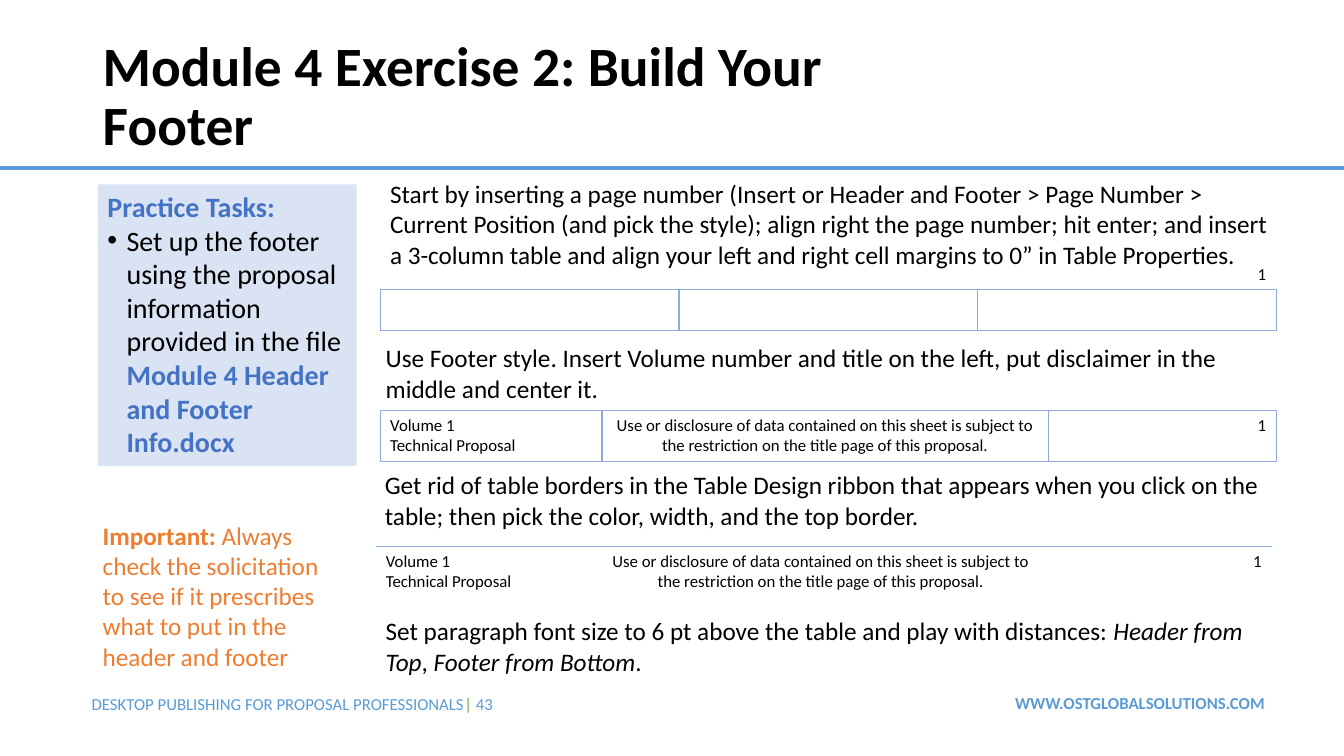
from dataclasses import dataclass
from typing import Optional

from lxml.etree import SubElement
from pptx import Presentation
from pptx.dml.color import RGBColor
from pptx.enum.shapes import MSO_CONNECTOR, MSO_SHAPE
from pptx.enum.text import MSO_ANCHOR, PP_ALIGN
from pptx.oxml import parse_xml
from pptx.oxml.ns import nsdecls, qn
from pptx.util import Cm, Pt


@dataclass(frozen=True)
class Theme:
    font: str = "Calibri"
    black: str = "000000"
    accent: str = "5B9BD5"
    green: str = "70AD47"
    blue: str = "4472C4"
    orange: str = "ED7D31"
    panel: str = "DAE3F3"
    border: str = "8FAADC"
    title: float = 39.6
    task: float = 20
    body: float = 18
    small: float = 12


T = Theme()


@dataclass(frozen=True)
class Run:
    text: str
    color: str = T.black
    bold: bool = False
    italic: bool = False


@dataclass(frozen=True)
class Para:
    runs: tuple[Run, ...]
    align: PP_ALIGN = PP_ALIGN.LEFT
    bullet: bool = False
    spacing: Optional[float] = None


@dataclass(frozen=True)
class Box:
    left: float
    top: float
    width: float
    height: float
    size: float
    paras: tuple[Para, ...]
    anchor: MSO_ANCHOR = MSO_ANCHOR.TOP
    fill: Optional[str] = None


@dataclass(frozen=True)
class Grid:
    left: float
    top: float
    height: float
    widths: tuple[float, ...]
    cells: tuple[tuple[Para, ...], ...]
    sides: str


def para(text: str, align: PP_ALIGN = PP_ALIGN.LEFT) -> Para:
    return Para((Run(text),), align)


def write(tf, paras: tuple[Para, ...], size: float) -> None:
    for i, item in enumerate(paras):
        p = tf.paragraphs[0] if i == 0 else tf.add_paragraph()
        p.alignment = item.align
        if item.spacing:
            p.line_spacing = item.spacing
        if item.bullet:
            pPr = p._p.get_or_add_pPr()
            pPr.set("marL", str(Cm(0.48)))
            pPr.set("indent", str(-Cm(0.48)))
            SubElement(pPr, qn("a:buFont")).set("typeface", "Arial")
            SubElement(pPr, qn("a:buChar")).set("char", "•")
        for run in item.runs:
            r = p.add_run()
            r.text = run.text
            r.font.name, r.font.size = T.font, Pt(size)
            r.font.bold, r.font.italic = run.bold, run.italic
            r.font.color.rgb = RGBColor.from_string(run.color)


def add_box(s, box: Box) -> None:
    place = [Cm(v) for v in (box.left, box.top, box.width, box.height)]
    if box.fill:
        sp = s.shapes.add_shape(MSO_SHAPE.RECTANGLE, *place)
        sp.shadow.inherit = False
        sp.fill.solid()
        sp.fill.fore_color.rgb = RGBColor.from_string(box.fill)
        sp.line.fill.background()
    else:
        sp = s.shapes.add_textbox(*place)
    tf = sp.text_frame
    tf.word_wrap = True
    tf.vertical_anchor = box.anchor
    write(tf, box.paras, box.size)


def add_grid(s, grid: Grid) -> None:
    frame = s.shapes.add_table(1, len(grid.widths), Cm(grid.left), Cm(grid.top),
                               Cm(sum(grid.widths)), Cm(grid.height))
    table = frame.table
    table.first_row = table.horz_banding = False
    # "No Style, No Grid"
    table._tbl.tblPr.find(qn("a:tableStyleId")).text = "{2D5ABB26-0587-4C30-8999-92F81FD0307C}"
    for i, width in enumerate(grid.widths):
        table.columns[i].width = Cm(width)
        cell = table.cell(0, i)
        cell.fill.background()
        tcPr = cell._tc.get_or_add_tcPr()
        for n, side in enumerate(grid.sides):
            tcPr.insert(n, parse_xml(
                f'<a:ln{side} {nsdecls("a")} w="{Pt(1)}"><a:solidFill>'
                f'<a:srgbClr val="{T.border}"/></a:solidFill></a:ln{side}>'))
        if grid.cells:
            write(cell.text_frame, grid.cells[i], T.small)


def add_rule(s, top: float, width: float) -> None:
    line = s.shapes.add_connector(MSO_CONNECTOR.STRAIGHT, 0, Cm(top), Cm(width), Cm(top))
    line.line.color.rgb = RGBColor.from_string(T.accent)
    line.line.width = Pt(3)
    SubElement(line._element.spPr, qn("a:effectLst"))


FOOTER_COLS = (5.59, 11.25, 5.74)
FOOTER_CELLS = (
    (para("Volume 1"), para("Technical Proposal")),
    (para("Use or disclosure of data contained on this sheet is subject to "
          "the restriction on the title page of this proposal.", PP_ALIGN.CENTER),),
    (para("1", PP_ALIGN.RIGHT),),
)

GRIDS = (
    Grid(9.58, 7.29, 1.04, (7.53,) * 3, (), "LRTB"),
    Grid(9.58, 10.34, 1.27, FOOTER_COLS, FOOTER_CELLS, "LRTB"),
    Grid(9.47, 13.77, 1.27, FOOTER_COLS, FOOTER_CELLS, "T"),
)

BOXES = (
    # Slide footer
    Box(25.2, 17.32, 6.93, 0.76, T.small, (
        Para((Run("WWW.OSTGLOBALSOLUTIONS.COM", T.accent, bold=True),), PP_ALIGN.RIGHT),)),
    Box(2.06, 17.35, 12.24, 0.76, T.small, (
        Para((Run("DESKTOP PUBLISHING FOR PROPOSAL PROFESSIONALS", T.accent),
              Run("| ", T.green), Run("43", T.accent))),)),
    # Title
    Box(2.34, 1.02, 20.04, 2.9, T.title, (
        Para((Run("Module 4 Exercise 2: Build Your Footer", bold=True),), spacing=0.9),),
        MSO_ANCHOR.MIDDLE),
    # Steps
    Box(9.58, 4.37, 22.83, 2.57, T.body, (
        para("Start by inserting a page number (Insert or Header and Footer > Page Number > "
             "Current Position (and pick the style); align right the page number; hit enter; "
             "and insert a 3-column table and align your left and right cell margins to 0” "
             "in Table Properties."),)),
    Box(9.47, 8.51, 22.89, 1.8, T.body, (
        para("Use Footer style. Insert Volume number and title on the left, put disclaimer "
             "in the middle and center it."),)),
    Box(9.45, 11.71, 22.83, 1.8, T.body, (
        para("Get rid of table borders in the Table Design ribbon that appears when you click "
             "on the table; then pick the color, width, and the top border."),)),
    Box(9.47, 15.39, 22.83, 1.8, T.body, (
        Para((Run("Set paragraph font size to 6 pt above the table and play with distances: "),
              Run("Header from Top", italic=True), Run(", "),
              Run("Footer from Bottom", italic=True), Run("."))),)),
    Box(29.85, 6.53, 2.31, 0.76, T.small, (para("1", PP_ALIGN.RIGHT),)),
    # Side column
    Box(2.46, 4.65, 6.53, 7.09, T.task, (
        Para((Run("Practice Tasks:", T.blue, bold=True),)),
        Para((Run("Set up the footer using the proposal information provided in the file "),
              Run("Module 4 Header and Footer Info.docx", T.blue, bold=True)), bullet=True)),
        fill=T.panel),
    Box(2.34, 12.98, 6.27, 4.11, T.body, (
        Para((Run("Important: ", T.orange, bold=True),
              Run("Always check the solicitation to see if it prescribes what to put in "
                  "the header and footer", T.orange))),)),
)


def main() -> None:
    prs = Presentation()
    prs.slide_width, prs.slide_height = Cm(33.87), Cm(19.05)
    s = prs.slides.add_slide(prs.slide_layouts[6])
    add_rule(s, 4.24, 33.87)
    for grid in GRIDS:
        add_grid(s, grid)
    for box in BOXES:
        add_box(s, box)
    prs.save("out.pptx")


if __name__ == "__main__":
    main()
